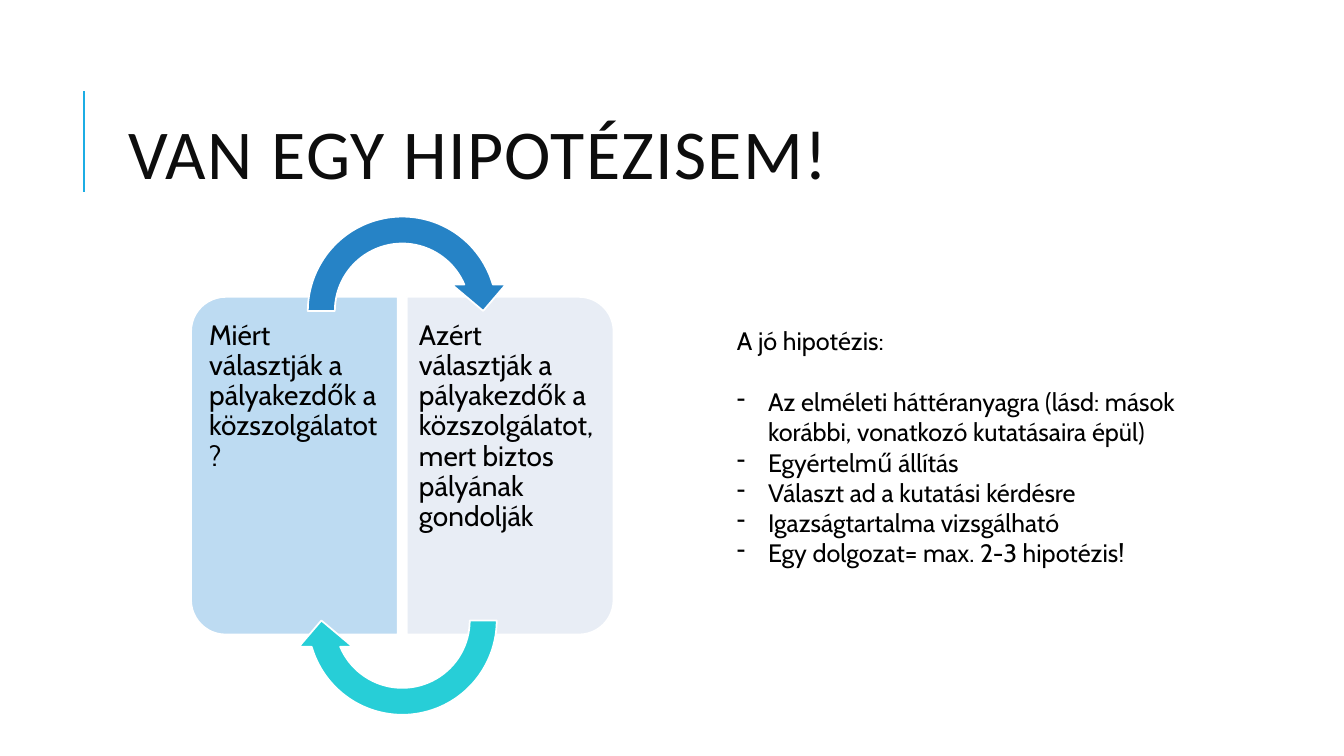
from dataclasses import dataclass

from lxml import etree
from pptx import Presentation
from pptx.dml.color import RGBColor
from pptx.enum.shapes import MSO_CONNECTOR, MSO_SHAPE
from pptx.enum.text import MSO_ANCHOR, PP_ALIGN
from pptx.oxml.ns import qn
from pptx.util import Inches, Pt

STRAIGHT = MSO_CONNECTOR.STRAIGHT
PANEL = MSO_SHAPE.ROUND_2_SAME_RECTANGLE
ARROW = MSO_SHAPE.CIRCULAR_ARROW
LEFT = PP_ALIGN.LEFT
TOP, MIDDLE = MSO_ANCHOR.TOP, MSO_ANCHOR.MIDDLE

TITLE = "VAN EGY HIPOTÉZISEM!"
PANELS = [
    ("Miért választják a pályakezdők a közszolgálatot?", "BDDBF2", 270, (0.08, 0.12)),
    ("Azért választják a pályakezdők a közszolgálatot, mert biztos pályának gondolják",
     "E8EDF5", 90, (0.12, 0.08)),
]
ARROWS = [("2683C6", 0), ("27CED7", 180)]
CRITERIA_HEADING = "A jó hipotézis:"
CRITERIA = [
    "Az elméleti háttéranyagra (lásd: mások korábbi, vonatkozó kutatásaira épül)",
    "Egyértelmű állítás",
    "Választ ad a kutatási kérdésre",
    "Igazságtartalma vizsgálható",
    "Egy dolgozat= max. 2-3 hipotézis!",
]


@dataclass(frozen=True)
class Theme:
    title_font: str = "Calibri"
    body_font: str = "Cabin"
    title_size: int = 50
    panel_size: int = 20
    criteria_size: int = 18
    title_color: str = "0D0D0D"
    text_color: str = "000000"
    accent: str = "1CADE4"
    outline: str = "FFFFFF"


THEME = Theme()
SLIDE_WIDTH, SLIDE_HEIGHT = 13.33, 7.5
CYCLE_X, CYCLE_Y = 3.99, 4.62
PANEL_WIDTH, PANEL_HEIGHT, PANEL_PITCH = 2.05, 3.35, 2.14
TEXT_MARGIN = 0.1
ARROW_SIZE, ARROW_PITCH = 2.14, 3.07
ARROW_ADJUSTMENTS = (0.125, 11.423, 204.577, 108, 0.125)
BULLET_INDENT = 0.31


def color(value):
    return RGBColor.from_string(value)


def set_font(paragraph, name, size, value):
    paragraph.font.name = name
    paragraph.font.size = Pt(size)
    paragraph.font.color.rgb = color(value)


def add_shape(slide, kind, center, size, fill, rotation, adjustments):
    (x, y), (width, height) = center, size
    shape = slide.shapes.add_shape(kind, Inches(x - width / 2), Inches(y - height / 2),
                                   Inches(width), Inches(height))
    shape.rotation = rotation
    for index, value in enumerate(adjustments):
        shape.adjustments[index] = value
    shape.fill.solid()
    shape.fill.fore_color.rgb = color(fill)
    shape.line.color.rgb = color(THEME.outline)
    shape.line.width = Pt(1.25)
    shape.shadow.inherit = False


def add_text_frame(slide, left, top, width, height):
    box = slide.shapes.add_textbox(Inches(left), Inches(top), Inches(width), Inches(height))
    box.text_frame.word_wrap = True
    box.text_frame.vertical_anchor = TOP
    return box.text_frame


def add_title(slide):
    title = slide.shapes.title
    title.left, title.top = Inches(1.17), Inches(0.76)
    title.width, title.height = Inches(10.63), Inches(1.64)
    title.text_frame.text = TITLE
    title.text_frame.vertical_anchor = MIDDLE
    paragraph = title.text_frame.paragraphs[0]
    paragraph.alignment = LEFT
    paragraph.line_spacing = 0.8
    set_font(paragraph, THEME.title_font, THEME.title_size, THEME.title_color)
    paragraph.runs[0].font._element.set("spc", "100")
    rule = slide.shapes.add_connector(STRAIGHT, Inches(0.83), Inches(1.9),
                                      Inches(0.83), Inches(0.9))
    rule.line.color.rgb = color(THEME.accent)
    rule.line.width = Pt(1.5)
    etree.SubElement(rule._element.spPr, qn("a:effectLst"))


def add_panels(slide):
    for column, (text, fill, rotation, insets) in enumerate(PANELS):
        x = CYCLE_X + (column - 0.5) * PANEL_PITCH
        add_shape(slide, PANEL, (x, CYCLE_Y), (PANEL_HEIGHT, PANEL_WIDTH),
                  fill, rotation, (0.167, 0))
        left = x - PANEL_WIDTH / 2 + TEXT_MARGIN * (1 - column)
        frame = add_text_frame(slide, left, CYCLE_Y - PANEL_HEIGHT / 2 + TEXT_MARGIN,
                               PANEL_WIDTH - TEXT_MARGIN, PANEL_HEIGHT - 2 * TEXT_MARGIN)
        frame.margin_left, frame.margin_right = map(Inches, insets)
        frame.margin_top = frame.margin_bottom = Inches(0.14)
        frame.text = text
        paragraph = frame.paragraphs[0]
        paragraph.line_spacing = 0.9
        set_font(paragraph, THEME.body_font, THEME.panel_size, THEME.text_color)


def add_arrows(slide):
    for row, (fill, rotation) in enumerate(ARROWS):
        y = CYCLE_Y + (row - 0.5) * ARROW_PITCH
        add_shape(slide, ARROW, (CYCLE_X, y), (ARROW_SIZE, ARROW_SIZE),
                  fill, rotation, ARROW_ADJUSTMENTS)


def add_criteria(slide):
    frame = add_text_frame(slide, 7.21, 3.18, 4.75, 2.52)
    frame.text = "\n".join([CRITERIA_HEADING, *CRITERIA])
    for paragraph in frame.paragraphs:
        set_font(paragraph, THEME.body_font, THEME.criteria_size, THEME.text_color)
    heading, *items = frame.paragraphs
    heading.space_after = Pt(22)
    for paragraph in items:
        properties = paragraph._p.get_or_add_pPr()
        properties.set("marL", str(Inches(BULLET_INDENT)))
        properties.set("indent", str(-Inches(BULLET_INDENT)))
        bullet = etree.Element(qn("a:buChar"), char="-")
        properties.insert_element_before(bullet, "a:tabLst", "a:defRPr", "a:extLst")


def main():
    presentation = Presentation()
    presentation.slide_width = Inches(SLIDE_WIDTH)
    presentation.slide_height = Inches(SLIDE_HEIGHT)
    slide = presentation.slides.add_slide(presentation.slide_layouts[5])
    add_title(slide)
    add_panels(slide)
    add_arrows(slide)
    add_criteria(slide)
    presentation.save("out.pptx")


if __name__ == "__main__":
    main()
